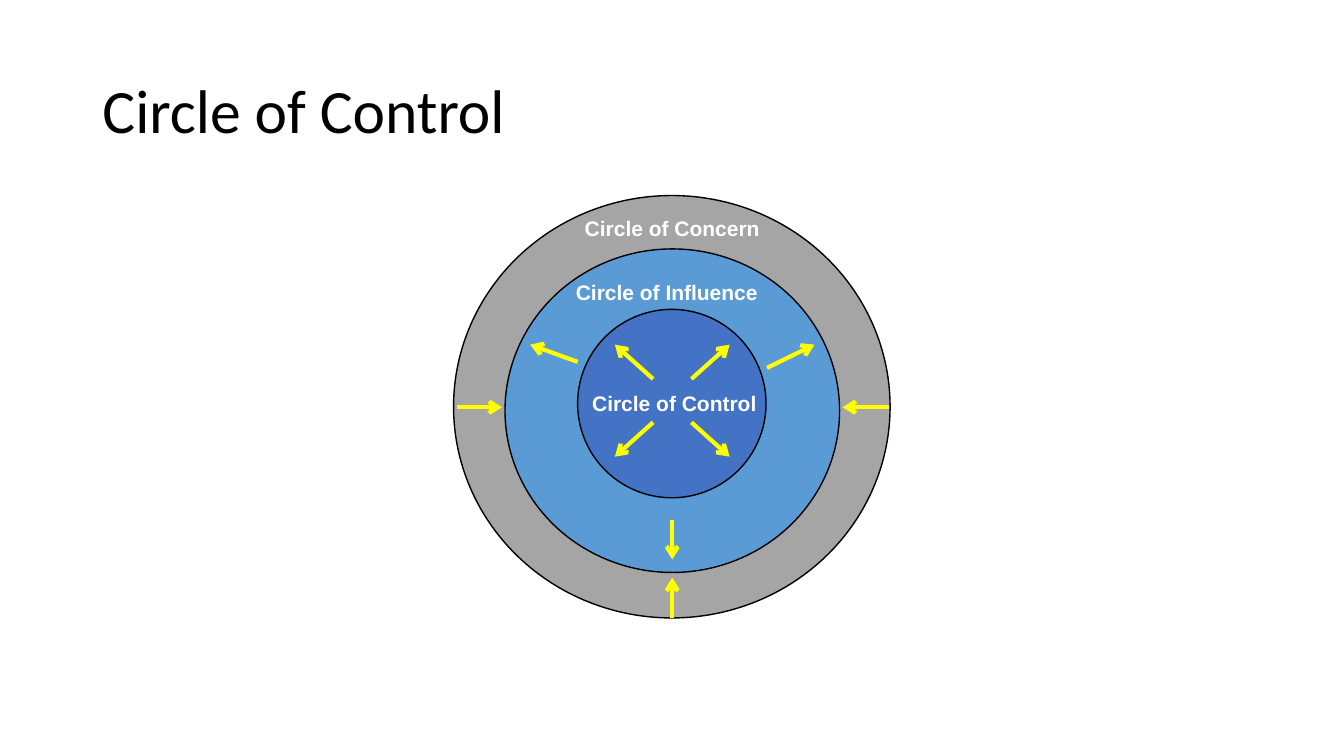
from dataclasses import dataclass
from itertools import product

import lxml.etree
import pptx
import pptx.dml.color
import pptx.enum.shapes
import pptx.enum.text
import pptx.oxml.ns
import pptx.slide
import pptx.text.text
import pptx.util

Pt = pptx.util.Pt
RGBColor = pptx.dml.color.RGBColor

BLACK = RGBColor(0x00, 0x00, 0x00)
WHITE = RGBColor(0xFF, 0xFF, 0xFF)
GRAY = RGBColor(0xA5, 0xA5, 0xA5)
SKY = RGBColor(0x5B, 0x9B, 0xD5)
BLUE = RGBColor(0x44, 0x72, 0xC4)
YELLOW = RGBColor(0xFF, 0xFF, 0x00)

MID_X, MID_Y = 480.2, 286.2  # middle of the inner circle's arrows
SIDE_Y = 290.9


@dataclass(frozen=True)
class Ring:
    left: float
    top: float
    width: float
    height: float
    fill: RGBColor


@dataclass(frozen=True)
class Label:
    text: str
    left: float
    top: float
    width: float


@dataclass(frozen=True)
class Arrow:
    x1: float
    y1: float
    x2: float
    y2: float


RINGS = [
    Ring(324, 139.7, 311.8, 301.7, GRAY),
    Ring(360.7, 177.8, 239, 231.1, SKY),
    Ring(412.6, 221, 134.6, 134.6, BLUE),
]
LABELS = [
    Label("Circle of Control", 416.9, 275.8, 129.6),
    Label("Circle of Concern", 411.8, 151.2, 136.8),
    Label("Circle of Influence", 405.4, 196.6, 141.8),
]
ARROWS = [
    Arrow(MID_X + 13.7 * sx, MID_Y + 15.5 * sy, MID_X + 41 * sx, MID_Y + 40 * sy)
    for sy, sx in product((-1, 1), repeat=2)
] + [
    Arrow(MID_X, 371.5, MID_X, 399.6),
    Arrow(MID_X, 441.4, MID_X, 412.6),
    Arrow(326.2, SIDE_Y, 358.6, SIDE_Y),
    Arrow(635, SIDE_Y, 601.9, SIDE_Y),
    Arrow(547.9, 262.8, 581.8, 246.2),
    Arrow(412.6, 258.5, 378.7, 246.2),
]


def style(par: pptx.text.text._Paragraph, name: str, size: float,
          color: RGBColor, bold: bool) -> None:
    """Format every run of the paragraph."""
    for run in par.runs:
        font = run.font
        font.name, font.size, font.bold = name, Pt(size), bold
        font.color.rgb = color


def set_title(slide: pptx.slide.Slide, text: str) -> None:
    title = slide.shapes.title
    title.left, title.top = Pt(66), Pt(28.8)
    title.width, title.height = Pt(828), Pt(104.4)
    frame = title.text_frame
    frame.text = text
    frame.vertical_anchor = pptx.enum.text.MSO_ANCHOR.MIDDLE
    par = frame.paragraphs[0]
    par.alignment = pptx.enum.text.PP_ALIGN.LEFT
    par.line_spacing = 0.9
    style(par, "Calibri", 44, BLACK, False)


def add_ring(slide: pptx.slide.Slide, ring: Ring) -> None:
    shape = slide.shapes.add_shape(
        pptx.enum.shapes.MSO_SHAPE.OVAL,
        Pt(ring.left), Pt(ring.top), Pt(ring.width), Pt(ring.height))
    shape.shadow.inherit = False
    shape.fill.solid()
    shape.fill.fore_color.rgb = ring.fill
    shape.line.color.rgb = BLACK
    shape.line.width = Pt(1)


def add_label(slide: pptx.slide.Slide, label: Label) -> None:
    box = slide.shapes.add_textbox(
        Pt(label.left), Pt(label.top), Pt(label.width), Pt(23.8))
    frame = box.text_frame
    frame.text = label.text
    frame.word_wrap = False
    frame.auto_size = pptx.enum.text.MSO_AUTO_SIZE.SHAPE_TO_FIT_TEXT
    frame.margin_left = frame.margin_right = Pt(5)
    frame.margin_top = frame.margin_bottom = Pt(2.9)
    par = frame.paragraphs[0]
    par.alignment = pptx.enum.text.PP_ALIGN.CENTER
    style(par, "Arial", 15, WHITE, True)


def add_arrow(slide: pptx.slide.Slide, arrow: Arrow) -> None:
    link = slide.shapes.add_connector(
        pptx.enum.shapes.MSO_CONNECTOR.STRAIGHT,
        Pt(arrow.x1), Pt(arrow.y1), Pt(arrow.x2), Pt(arrow.y2))
    link.line.color.rgb = YELLOW
    link.line.width = Pt(3)
    qn = pptx.oxml.ns.qn
    props = link._element.spPr
    line = props.find(qn("a:ln"))
    lxml.etree.SubElement(line, qn("a:tailEnd"), type="arrow")
    lxml.etree.SubElement(props, qn("a:effectLst"))


def main() -> None:
    deck = pptx.Presentation()
    deck.slide_width, deck.slide_height = Pt(960), Pt(540)
    slide = deck.slides.add_slide(deck.slide_layouts.get_by_name("Title Only"))
    set_title(slide, "Circle of Control")
    for ring in RINGS:
        add_ring(slide, ring)
    for label in LABELS:
        add_label(slide, label)
    for arrow in ARROWS:
        add_arrow(slide, arrow)
    deck.save("out.pptx")


if __name__ == "__main__":
    main()
